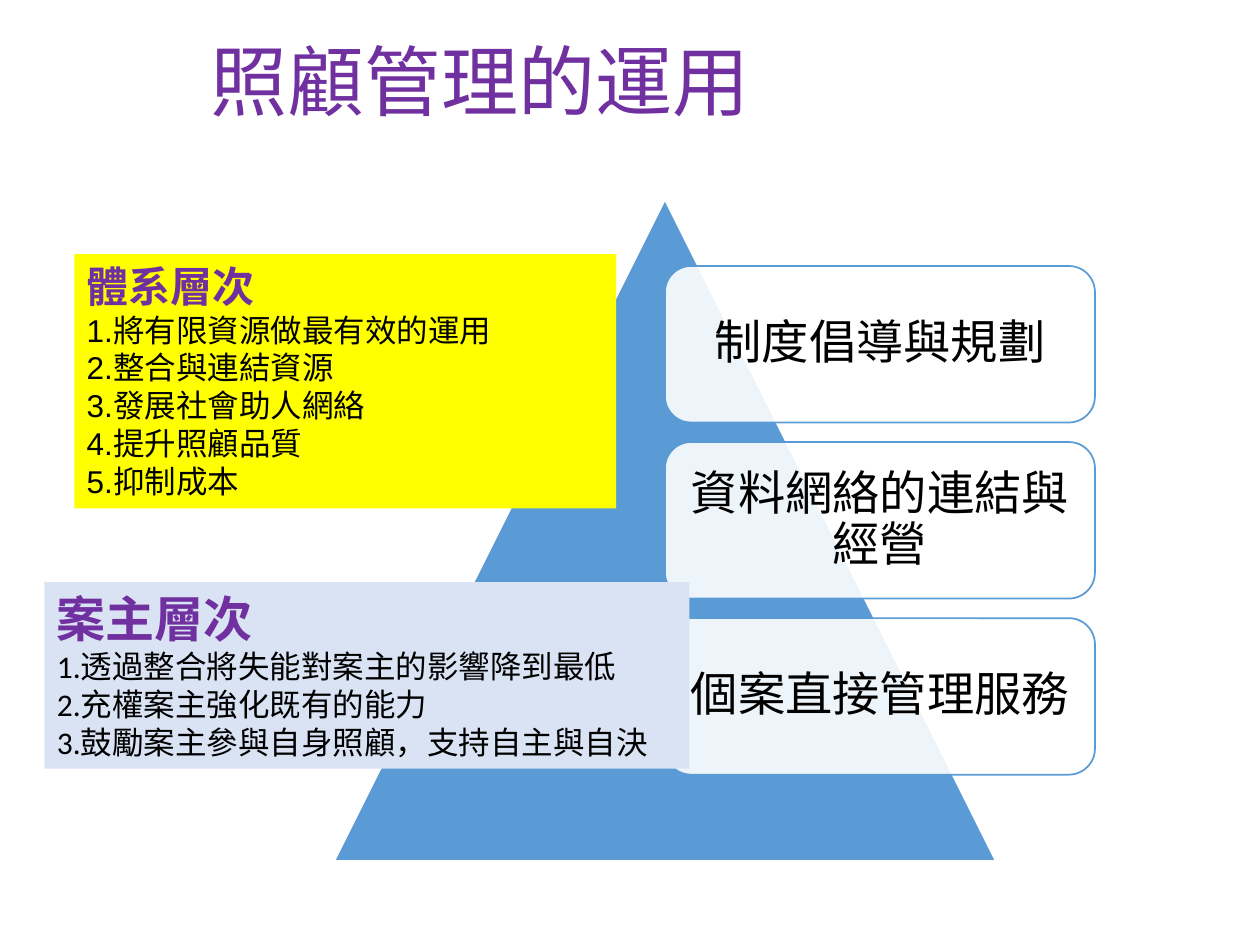
from dataclasses import dataclass

from lxml.etree import SubElement
from pptx import Presentation
from pptx.dml.color import RGBColor
from pptx.enum.shapes import MSO_SHAPE
from pptx.enum.text import MSO_ANCHOR, MSO_AUTO_SIZE, PP_ALIGN
from pptx.oxml.ns import qn
from pptx.util import Pt


@dataclass(frozen=True)
class Theme:
    purple: str = "7030A0"
    blue: str = "5B9BD5"
    pale_blue: str = "DAE3F3"
    yellow: str = "FFFF00"
    white: str = "FFFFFF"
    black: str = "000000"
    title_font: str = "Noto Sans CJK SC"
    body_font: str = "Calibri"
    system_font: str = "Arial"
    title_size: int = 44
    card_size: int = 27
    client_heading_size: int = 28
    system_heading_size: int = 24
    item_size: int = 18


THEME = Theme()


def write_text(paragraph, text, *, size, font, color, bold=False, align=PP_ALIGN.LEFT, spacing=1.0):
    paragraph.alignment = align
    paragraph.line_spacing = spacing
    run = paragraph.add_run()
    run.text = text
    run.font.size = Pt(size)
    run.font.name = font
    run.font.bold = bold
    run.font.color.rgb = RGBColor.from_string(color)


def add_filled_shape(shapes, kind, box, fill, line=None, opacity=None):
    shape = shapes.add_shape(kind, *(Pt(value) for value in box))
    shape.shadow.inherit = False
    shape.fill.solid()
    shape.fill.fore_color.rgb = RGBColor.from_string(fill)
    if opacity is not None:
        color = shape.fill._xPr.find(qn("a:solidFill")).find(qn("a:srgbClr"))
        SubElement(color, qn("a:alpha"), val=str(opacity * 1000))
    if line is None:
        shape.line.fill.background()
    else:
        shape.line.color.rgb = RGBColor.from_string(line)
        shape.line.width = Pt(1)
    return shape


def place_title(slide, box, text):
    title = slide.shapes.title
    title.left, title.top, title.width, title.height = (Pt(value) for value in box)
    frame = title.text_frame
    frame.auto_size = MSO_AUTO_SIZE.NONE
    frame.vertical_anchor = MSO_ANCHOR.TOP
    write_text(frame.paragraphs[0], text, size=THEME.title_size, font=THEME.title_font,
               color=THEME.purple, spacing=0.9)


def place_pyramid(slide, box, levels):
    left, top, width, height = box
    group = slide.shapes.add_group_shape()
    add_filled_shape(group.shapes, MSO_SHAPE.ISOSCELES_TRIANGLE, box, THEME.blue, THEME.white)
    card_width = width * 0.65
    card_height = height * 0.2366
    pitch = card_height * 1.125
    first_top = top + height * 0.1005
    for index, level in enumerate(levels):
        card_box = (left + width / 2, first_top + index * pitch, card_width, card_height)
        card = add_filled_shape(group.shapes, MSO_SHAPE.ROUNDED_RECTANGLE, card_box,
                                THEME.white, THEME.blue, opacity=90)
        frame = card.text_frame
        frame.word_wrap = True
        frame.vertical_anchor = MSO_ANCHOR.MIDDLE
        frame.margin_left = frame.margin_right = frame.margin_top = frame.margin_bottom = Pt(8)
        write_text(frame.paragraphs[0], level, size=THEME.card_size, font=THEME.body_font,
                   color=THEME.black, align=PP_ALIGN.CENTER, spacing=0.9)


def place_panel(slide, box, heading, items, *, fill, font, heading_size):
    panel = add_filled_shape(slide.shapes, MSO_SHAPE.RECTANGLE, box, fill)
    frame = panel.text_frame
    frame.word_wrap = True
    frame.auto_size = MSO_AUTO_SIZE.SHAPE_TO_FIT_TEXT
    frame.vertical_anchor = MSO_ANCHOR.TOP
    write_text(frame.paragraphs[0], heading, size=heading_size, font=font,
               color=THEME.purple, bold=True)
    for number, item in enumerate(items, start=1):
        write_text(frame.add_paragraph(), f"{number}.{item}", size=THEME.item_size,
                   font=font, color=THEME.black)


def main():
    presentation = Presentation()
    presentation.slide_width = Pt(720)
    presentation.slide_height = Pt(540)
    slide = presentation.slides.add_slide(presentation.slide_layouts[5])

    place_title(slide, (113, 21.6, 590.4, 90), "照顧管理的運用")
    place_pyramid(slide, (191, 114, 378, 378),
                  ["制度倡導與規劃", "資料網絡的連結與經營", "個案直接管理服務"])
    place_panel(slide, (25.4, 332.6, 368.6, 106.6), "案主層次",
                ["透過整合將失能對案主的影響降到最低", "充權案主強化既有的能力",
                 "鼓勵案主參與自身照顧，支持自主與自決"],
                fill=THEME.pale_blue, font=THEME.body_font,
                heading_size=THEME.client_heading_size)
    place_panel(slide, (42.5, 145.2, 309.6, 145.4), "體系層次",
                ["將有限資源做最有效的運用", "整合與連結資源", "發展社會助人網絡",
                 "提升照顧品質", "抑制成本"],
                fill=THEME.yellow, font=THEME.system_font,
                heading_size=THEME.system_heading_size)

    presentation.save("out.pptx")


if __name__ == "__main__":
    main()
